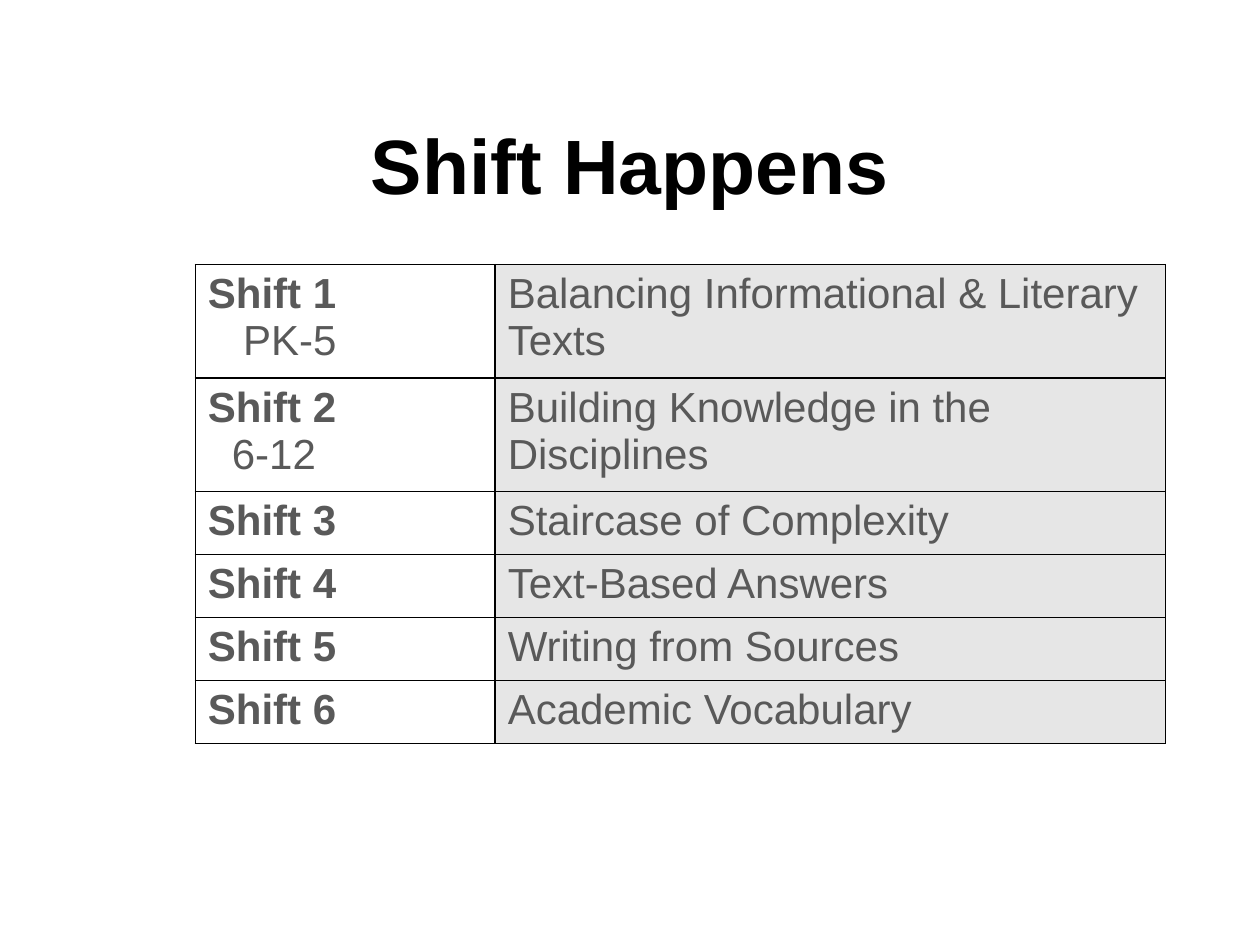
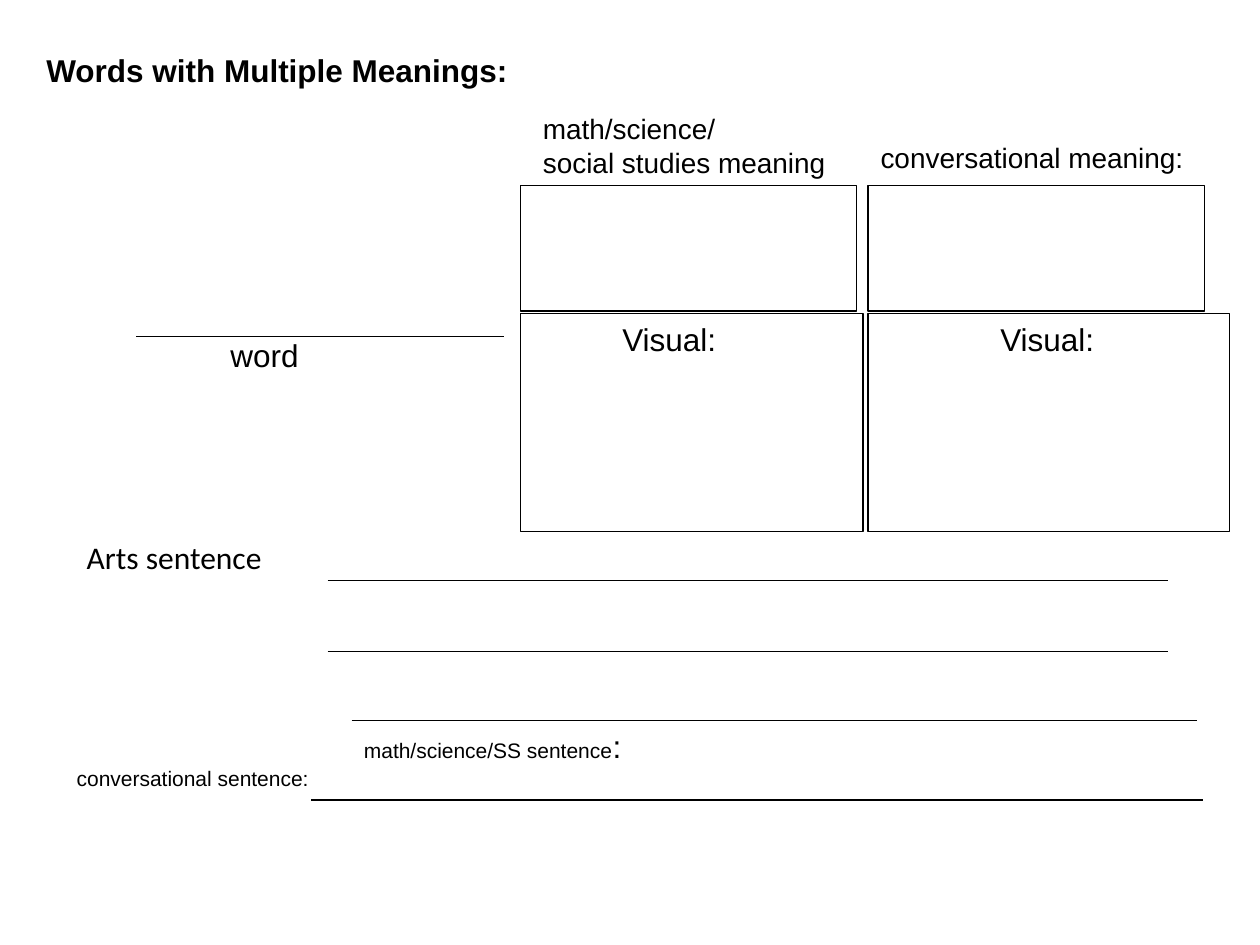
from pptx import Presentation
from pptx.dml.color import RGBColor
from pptx.enum.shapes import MSO_CONNECTOR as CONN, MSO_SHAPE as SHAPE
from pptx.enum.text import MSO_ANCHOR as ANCHOR, MSO_AUTO_SIZE as FIT, PP_ALIGN as ALIGN
from pptx.oxml import parse_xml
from pptx.oxml.ns import nsdecls
from pptx.util import Inches, Pt

BLACK = RGBColor(0x00, 0x00, 0x00)
GREY = RGBColor(0x59, 0x59, 0x59)
PALE = RGBColor(0xE6, 0xE6, 0xE6)

prs = Presentation()
prs.slide_width, prs.slide_height = Inches(10), Inches(7.5)
COL = prs.slide_width / 100   # grid of 100 columns
ROW = prs.slide_height / 75   # by 75 rows


def place(x, y, w, h):
    """Turn grid columns and rows into slide lengths."""
    return [round(n) for n in (x * COL, y * ROW, w * COL, h * ROW)]


def write(tf, lines, size, color=BLACK, name="Arial", bold=False):
    """Fill a text frame; each line is a list of (text, format changes)."""
    for i, runs in enumerate(lines):
        p = tf.paragraphs[0] if i == 0 else tf.add_paragraph()
        for text, changes in runs:
            r = p.add_run()
            r.text = text
            r.font.color.rgb = color
            style = {"name": name, "size": Pt(size), "bold": bold, **changes}
            for key, value in style.items():
                setattr(r.font, key, value)


# Slide 1: title
s = prs.slides.add_slide(prs.slide_layouts[6])
tf = s.shapes.add_textbox(*place(7.5, 6.7, 85, 12.5)).text_frame
tf.word_wrap, tf.vertical_anchor = True, ANCHOR.MIDDLE
write(tf, [[("Shift Happens", {})]], 44, bold=True)
tf.paragraphs[0].alignment = ALIGN.CENTER

# Slide 1: table of shifts (topic, grades, indent of the grades in inches)
shifts = [
    ("Balancing Informational & Literary Texts", "PK-5", 0.28),
    ("Building Knowledge in the Disciplines", "6-12", 0.19),
    ("Staircase of Complexity", None, 0),
    ("Text-Based Answers", None, 0),
    ("Writing from Sources", None, 0),
    ("Academic Vocabulary", None, 0),
]
frame = s.shapes.add_table(len(shifts), 2, *place(15.5, 21, 77, 35.6))
table = frame.table
table.first_row = table.horz_banding = False
for column, width in zip(table.columns, (23.8, 53.2)):
    column.width = round(width * COL)

for i, (topic, grades, indent) in enumerate(shifts):
    table.rows[i].height = round((8 if grades else 4.9) * ROW)
    label, body = table.cell(i, 0), table.cell(i, 1)
    lines = [[(f"Shift {i + 1}", {"bold": True})]]
    if grades:
        lines.append([(grades, {})])
    write(label.text_frame, lines, 24, GREY)
    if grades:
        pPr = label.text_frame.paragraphs[1]._p.get_or_add_pPr()
        pPr.set("marL", str(Inches(indent)))
    write(body.text_frame, [[(topic, {})]], 24, GREY)
    for cell in (label, body):
        tcPr = cell._tc.get_or_add_tcPr()
        for side in ("lnL", "lnR", "lnT", "lnB"):
            tcPr.append(parse_xml(
                f'<a:{side} {nsdecls("a")} w="{Pt(1)}"><a:solidFill>'
                f'<a:srgbClr val="{BLACK}"/></a:solidFill></a:{side}>'))
    label.fill.background()
    body.fill.solid()
    body.fill.fore_color.rgb = PALE

# Slide 2: meaning boxes above visual boxes
s = prs.slides.add_slide(prs.slide_layouts[6])
LEFT, RIGHT, MEANING, VISUAL = 41.3, 68.9, 14.7, 24.9
for box in [
    (LEFT, MEANING, 26.7, 10), (RIGHT, MEANING, 26.7, 10),
    (LEFT, VISUAL, 27.2, 17.3), (RIGHT, VISUAL, 28.7, 17.3),
]:
    sp = s.shapes.add_shape(SHAPE.RECTANGLE, *place(*box))
    sp.shadow.inherit = False
    sp.fill.background()
    sp.line.color.rgb, sp.line.width = BLACK, Pt(0.75)

# Slide 2: writing lines (start column, end column, row)
for x1, x2, y in [
    (10.8, 40, 26.7), (26, 92.7, 46.1), (26, 92.7, 51.7),
    (27.9, 95, 57.2), (24.7, 95.5, 63.5),
]:
    ends = round(x1 * COL), round(y * ROW), round(x2 * COL), round(y * ROW)
    line = s.shapes.add_connector(CONN.STRAIGHT, *ends)
    line.line.color.rgb, line.line.width = BLACK, Pt(0.75)
    line._element.spPr.append(parse_xml(f'<a:effectLst {nsdecls("a")}/>'))

# Slide 2: labels (place, size, lines, format changes)
labels = [
    ((2.7, 3.6, 39.4, 4), 18, ["Words with Multiple Meanings:"], {"bold": True}),
    ((17.3, 26.2, 7.4, 4), 18, ["word"], {}),
    ((42.1, 8.4, 24.5, 6.4), 16, ["math/science/", "social studies meaning"], {}),
    ((RIGHT, 10.7, 26.1, 3.7), 16, ["conversational meaning:"], {}),
    ((48.4, VISUAL, 10.2, 4), 18, ["Visual:"], {}),
    ((78.4, VISUAL, 10.2, 4), 18, ["Visual:"], {}),
    ((5.1, 60.3, 20.9, 3), 12, ["conversational sentence:"], {}),
    ((5.9, 42.2, 22, 4), 18, ["Arts sentence"], {"name": "Calibri"}),
    ((27.9, 57.2, 23.6, 4), 12, ["math/science/SS sentence"], {}),
]
for box, size, lines, changes in labels:
    tf = s.shapes.add_textbox(*place(*box)).text_frame
    tf.word_wrap, tf.auto_size = False, FIT.SHAPE_TO_FIT_TEXT
    runs = [[(text, {})] for text in lines]
    if "SS" in lines[0]:
        runs[0].append((":", {"size": Pt(18)}))
    write(tf, runs, size, **changes)
    if box[2] in (22, 23.6):  # these two keep their full width
        tf.word_wrap = True

prs.save("out.pptx")
